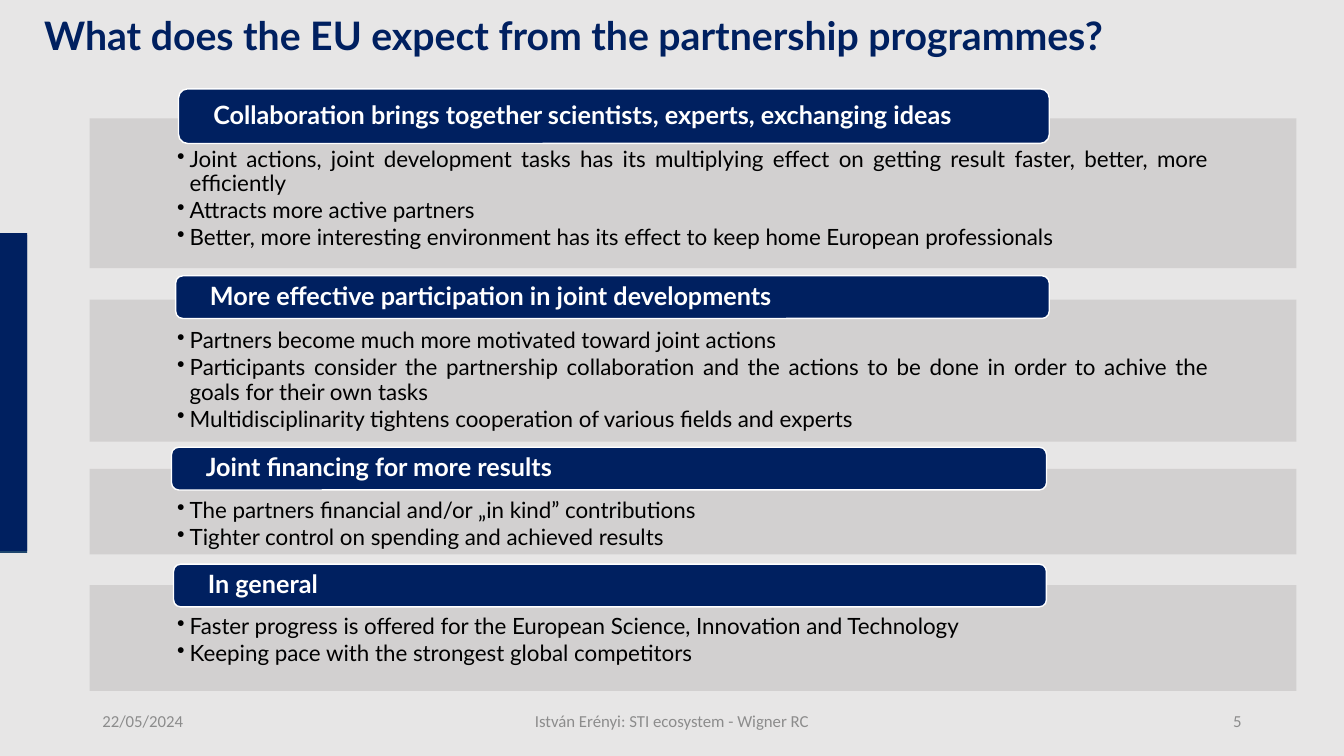
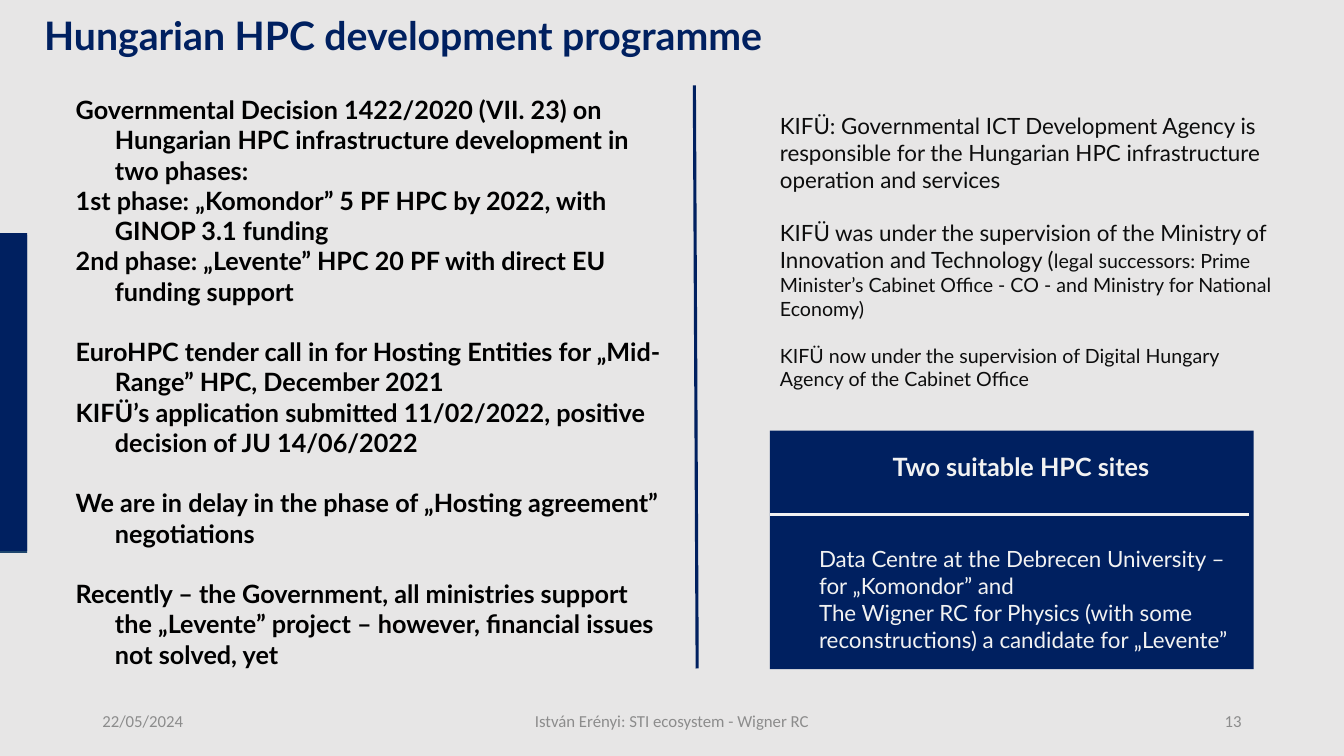
from dataclasses import dataclass

from lxml.etree import SubElement
from pptx import Presentation
from pptx.dml.color import RGBColor
from pptx.enum.shapes import MSO_CONNECTOR, MSO_SHAPE
from pptx.enum.text import MSO_ANCHOR, PP_ALIGN
from pptx.oxml.ns import qn
from pptx.util import Pt

NAVY = "002060"
BAND_EDGE = "1F466D"
BACKGROUND = "E7E6E6"
PANEL = "D0CECE"
WHITE = "FFFFFF"
PALE = "F2F2F2"
BLACK = "000000"
INK = "0D0D0D"
GREY = "8C8C8C"
DATE = "22/05/2024"
FOOTER = "István Erényi: STI ecosystem - Wigner RC"


@dataclass(frozen=True)
class TextStyle:
    size: float
    color: str
    bold: bool = False
    font: str = "Lato"
    align: PP_ALIGN = PP_ALIGN.LEFT
    anchor: MSO_ANCHOR = MSO_ANCHOR.TOP
    line_spacing: float = 1.0
    space_after: float = 0
    hanging: float = 0
    bullet: str = ""
    insets: tuple = (7.2, 3.6, 7.2, 3.6)


TITLE = TextStyle(28, NAVY, True, align=PP_ALIGN.JUSTIFY, line_spacing=0.9)
HEADING = TextStyle(18, WHITE, True, anchor=MSO_ANCHOR.MIDDLE,
                    line_spacing=0.9, insets=(23, 0, 23, 0))
BULLETS = TextStyle(16, BLACK, align=PP_ALIGN.JUSTIFY, line_spacing=0.9,
                    space_after=2, hanging=9, bullet="•",
                    insets=(62.5, 21.5, 62.5, 8))
TIMELINE = TextStyle(18, BLACK, True, hanging=28)
AGENCY = TextStyle(16, INK)
SITES_TITLE = TextStyle(18, PALE, True, align=PP_ALIGN.CENTER)
SITES_BODY = TextStyle(16, PALE)

# Each section: heading box, panel top and height, heading, bullets
SECTIONS = [
    ((127.5, 63.5, 622, 39), 84.5, 107,
     "Collaboration brings together scientists, experts, exchanging ideas",
     ["Joint actions, joint development tasks has its multiplying effect on "
      "getting result faster, better, more efficiently",
      "Attracts more active partners",
      "Better, more interesting environment has its effect to keep home "
      "European professionals"]),
    ((125.5, 197, 624, 30.5), 214, 101.5,
     "More effective participation in joint developments",
     ["Partners become much more motivated toward joint actions",
      "Participants consider the partnership collaboration and the actions "
      "to be done in order to achive the goals for their own tasks",
      "Multidisciplinarity tightens cooperation of various fields and experts"]),
    ((122.5, 319.5, 625, 30.5), 335, 61,
     "Joint financing for more results",
     ["The partners financial and/or „in kind” contributions",
      "Tighter control on spending and achieved results"]),
    ((124, 403, 623.5, 30.5), 418, 75.5,
     "In general",
     ["Faster progress is offered for the European Science, Innovation and "
      "Technology",
      "Keeping pace with the strongest global competitors"]),
]

# Each paragraph: gap above, then runs of text and size
TIMELINE_TEXT = [
    (gap, [(text, 18)]) for gap, text in [
        (0, "Governmental Decision 1422/2020 (VII. 23) on Hungarian HPC "
            "infrastructure development in two phases:"),
        (0, "1st phase: „Komondor” 5 PF HPC by 2022, with GINOP 3.1 funding"),
        (0, "2nd phase: „Levente” HPC 20 PF with direct EU funding support"),
        (21.6, "EuroHPC tender call in for Hosting Entities for „Mid-Range” "
               "HPC, December 2021"),
        (0, "KIFÜ’s application submitted 11/02/2022, positive decision of "
            "JU 14/06/2022"),
        (21.6, "We are in delay in the phase of „Hosting agreement” "
               "negotiations"),
        (21.6, "Recently – the Government, all ministries support the "
               "„Levente” project – however, financial issues not solved, yet"),
    ]
]
AGENCY_TEXT = [
    (0, [("KIFÜ: Governmental ICT Development Agency is responsible for the "
          "Hungarian HPC infrastructure operation and services", 16)]),
    (19.2, [("KIFÜ was under the supervision of the Ministry of Innovation "
             "and Technology (", 16),
            ("legal successors: Prime Minister’s Cabinet Office - CO - and "
             "Ministry for National Economy)", 14)]),
    (16.8, [("KIFÜ now under the supervision of Digital Hungary Agency of "
             "the Cabinet Office", 14)]),
]
SITES_TEXT = [
    "Data Centre at the Debrecen University – for „Komondor” and",
    "The Wigner RC for Physics (with some reconstructions) a candidate for "
    "„Levente”",
]


def rgb(color):
    return RGBColor.from_string(color)


def points(box):
    return [Pt(length) for length in box]


def write(frame, paragraphs, style):
    """Fill a frame with plain strings or (gap above, runs) pairs."""
    frame.word_wrap = True
    frame.vertical_anchor = style.anchor
    (frame.margin_left, frame.margin_top,
     frame.margin_right, frame.margin_bottom) = points(style.insets)
    for index, paragraph in enumerate(paragraphs):
        if isinstance(paragraph, str):
            paragraph = (0, [(paragraph, style.size)])
        gap, runs = paragraph
        para = frame.add_paragraph() if index else frame.paragraphs[0]
        para.alignment = style.align
        para.line_spacing = style.line_spacing
        para.space_before = Pt(gap)
        para.space_after = Pt(style.space_after)
        properties = para._p.get_or_add_pPr()
        if style.hanging:
            properties.set("marL", str(Pt(style.hanging)))
            properties.set("indent", str(-Pt(style.hanging)))
        if style.bullet:
            SubElement(properties, qn("a:buChar")).set("char", style.bullet)
        for text, size in runs:
            span = para.add_run()
            span.text = text
            span.font.name = style.font
            span.font.size = Pt(size)
            span.font.bold = style.bold
            span.font.color.rgb = rgb(color=style.color)


def add_text(page, box, paragraphs, style):
    write(page.shapes.add_textbox(*points(box)).text_frame, paragraphs, style)


def add_block(page, box, fill, kind=MSO_SHAPE.RECTANGLE, outline=None):
    block = page.shapes.add_shape(kind, *points(box))
    block.shadow.inherit = False
    block.fill.solid()
    block.fill.fore_color.rgb = rgb(fill)
    if outline:
        block.line.color.rgb = rgb(outline)
        block.line.width = Pt(1)
    else:
        block.line.fill.background()
    return block


def add_rule(page, ends, color, width):
    rule = page.shapes.add_connector(MSO_CONNECTOR.STRAIGHT, *points(ends))
    rule.line.color.rgb = rgb(color)
    rule.line.width = Pt(width)
    SubElement(rule._element.spPr, qn("a:effectLst"))


def add_page(deck, title, number):
    """Add a page with the background, side band, title and footer."""
    page = deck.slides.add_slide(deck.slide_layouts[6])
    page.background.fill.solid()
    page.background.fill.fore_color.rgb = rgb(BACKGROUND)
    for top, color in [(168, BAND_EDGE), (166.5, NAVY)]:
        add_block(page, (0, top, 19.5, 227), color)
    add_text(page, (24.5, 8, 816.5, 38), [title], TITLE)
    footer_parts = [
        (66, 216, DATE, PP_ALIGN.LEFT),
        (318, 324, FOOTER, PP_ALIGN.CENTER),
        (678, 216, str(number), PP_ALIGN.RIGHT),
    ]
    for left, width, text, align in footer_parts:
        style = TextStyle(12, GREY, font="Calibri", align=align,
                          anchor=MSO_ANCHOR.MIDDLE)
        add_text(page, (left, 500.5, width, 29), [text], style)
    return page


def add_section(page, heading_box, panel_box, heading, bullets):
    panel = add_block(page, panel_box, PANEL)
    color = panel.fill._xPr.find(".//" + qn("a:srgbClr"))
    SubElement(color, qn("a:alpha")).set("val", "90000")
    write(panel.text_frame, bullets, BULLETS)
    label = add_block(page, heading_box, NAVY,
                      MSO_SHAPE.ROUNDED_RECTANGLE, WHITE)
    write(label.text_frame, [heading], HEADING)


def add_sites_card(page, box):
    left, top, width, height = box
    add_block(page, box, NAVY)
    add_text(page, (left + 6.5, top + 11, width, 29),
             ["Two suitable HPC sites"], SITES_TITLE)
    add_rule(page, (left, top + 60, left + width - 3.5, top + 60), PALE, 2.5)
    add_text(page, (left + 28, top + 78.5, width - 32, height - 85),
             SITES_TEXT, SITES_BODY)


def build_expectations(deck):
    page = add_page(
        deck, "What does the EU expect from the partnership programmes?", 5)
    for heading_box, top, height, heading, bullets in SECTIONS:
        add_section(page, heading_box, (64, top, 862, height), heading, bullets)


def build_programme(deck):
    page = add_page(deck, "Hungarian HPC development programme", 13)
    add_text(page, (47, 64, 433.5, 443.5), TIMELINE_TEXT, TIMELINE)
    add_rule(page, (496, 61, 498, 477.5), NAVY, 2.25)
    add_text(page, (550, 76.5, 371.5, 208), AGENCY_TEXT, AGENCY)
    add_sites_card(page, (550, 307.5, 345.5, 170.5))


def main():
    deck = Presentation()
    deck.slide_width, deck.slide_height = Pt(960), Pt(540)
    build_expectations(deck)
    build_programme(deck)
    deck.save("out.pptx")


if __name__ == "__main__":
    main()
